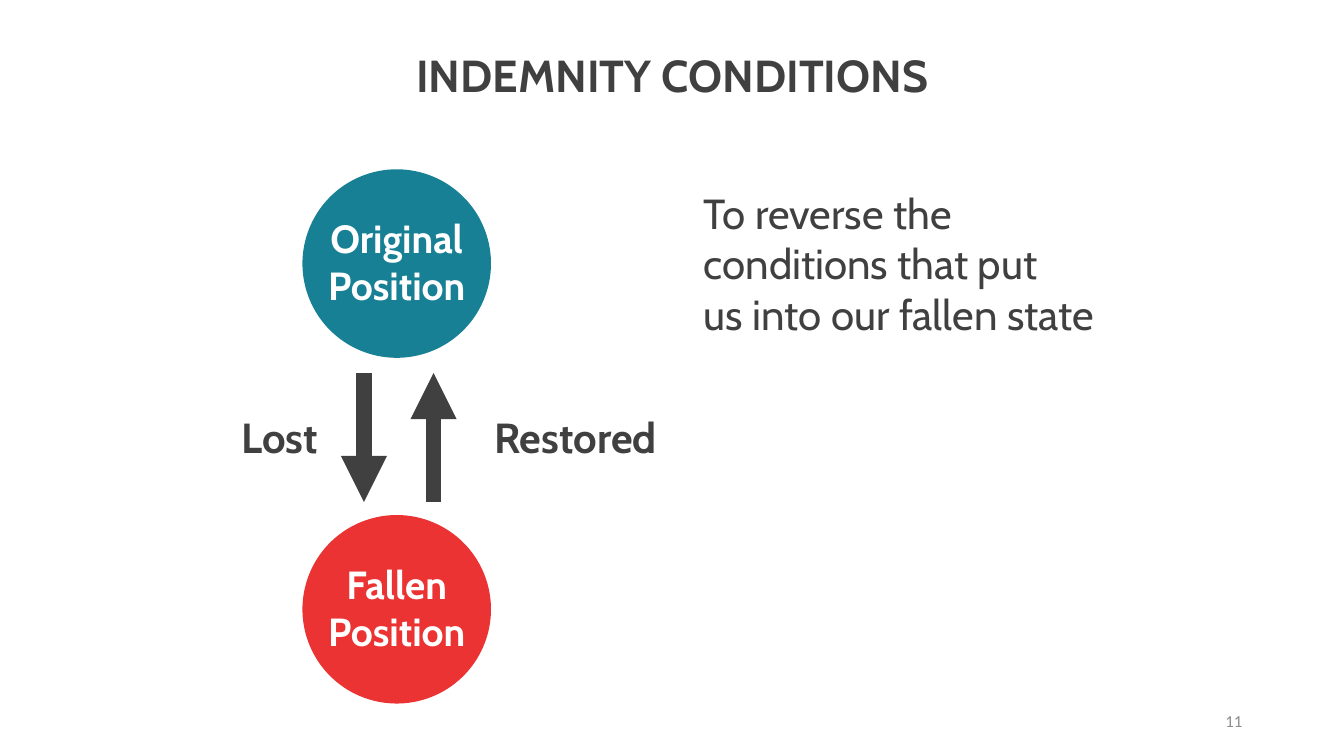
import pptx
import pptx.dml.color
import pptx.enum.shapes
import pptx.enum.text
import pptx.oxml
import pptx.oxml.ns
import pptx.util
from pptx.util import Inches

DARK = "404040"
WHITE = "FFFFFF"
ALIGN = pptx.enum.text.PP_ALIGN
ANCHOR = pptx.enum.text.MSO_ANCHOR
NAMESPACE = pptx.oxml.ns.nsdecls("a")


def colour(hex_value):
    """Return the colour for a hex string."""
    return pptx.dml.color.RGBColor.from_string(hex_value)


def place(holder, left, top, width, height):
    """Move and size a placeholder, in inches."""
    holder.left, holder.top = Inches(left), Inches(top)
    holder.width, holder.height = Inches(width), Inches(height)


def write(holder, text, size=30, font="Cabin", ink=DARK, bold=False, align=ALIGN.CENTER,
          anchor=ANCHOR.TOP, insets=(0.1, 0.05, 0.1, 0.05), wrap=True, bullet=True):
    """Fill a shape with formatted text, one paragraph per line."""
    frame = holder.text_frame
    frame.text = text
    frame.auto_size = pptx.enum.text.MSO_AUTO_SIZE.NONE
    frame.word_wrap = wrap
    frame.vertical_anchor = anchor
    (frame.margin_left, frame.margin_top,
     frame.margin_right, frame.margin_bottom) = map(Inches, insets)
    for paragraph in frame.paragraphs:
        if not bullet:
            properties = paragraph._p.get_or_add_pPr()
            properties.set("marL", "0")
            properties.set("indent", "0")
            properties.append(pptx.oxml.parse_xml(f"<a:buNone {NAMESPACE}/>"))
        paragraph.alignment = align
        paragraph.space_before = pptx.util.Pt(0)
        for run in paragraph.runs:
            run.font.name = font
            run.font.size = pptx.util.Pt(size)
            run.font.bold = bold
            run.font.color.rgb = colour(ink)


def add_position(slide, text, fill, left, top, diameter):
    """Draw a labelled circle for one position."""
    position = slide.shapes.add_shape(
        pptx.enum.shapes.MSO_SHAPE.OVAL, *map(Inches, (left, top, diameter, diameter)))
    position.shadow.inherit = False
    position.fill.solid()
    position.fill.fore_color.rgb = colour(fill)
    position.line.fill.background()
    write(position, text, size=28, ink=WHITE, bold=True, anchor=ANCHOR.MIDDLE,
          insets=(0, 0, 0, 0.04), wrap=False)


def add_arrow(slide, x, start, end):
    """Draw a thick vertical arrow from start to end."""
    arrow = slide.shapes.add_connector(
        pptx.enum.shapes.MSO_CONNECTOR.STRAIGHT, *map(Inches, (x, start, x, end)))
    arrow.line.color.rgb = colour(DARK)
    arrow.line.width = pptx.util.Pt(11)
    arrow.line._get_or_add_ln().append(
        pptx.oxml.parse_xml(f'<a:tailEnd {NAMESPACE} type="triangle"/>'))
    arrow._element.spPr.append(pptx.oxml.parse_xml(f"<a:effectLst {NAMESPACE}/>"))


def add_label(slide, text, left, top, width, height):
    """Add a bold label beside an arrow."""
    label = slide.shapes.add_textbox(*map(Inches, (left, top, width, height)))
    write(label, text, bold=True, insets=(0.04, 0.03, 0.04, 0.05))


def add_cycle(slide, left, top, width, height):
    """Draw the two positions with the arrows and labels between them."""
    diameter = 1.87
    circle_left = left + 0.81
    arrow_top, arrow_bottom = top + 2.02, top + 3.3
    label_top = top + 2.37
    add_position(slide, "Original\nPosition", "178095", circle_left, top, diameter)
    add_position(slide, "Fallen\nPosition", "EA3332", circle_left,
                 top + height - diameter, diameter)
    add_arrow(slide, left + 1.42, arrow_top, arrow_bottom)
    add_arrow(slide, left + 2.11, arrow_bottom, arrow_top)
    add_label(slide, "Lost", left, label_top, 1.17, 0.58)
    add_label(slide, "Restored", left + width - 2.34, label_top, 2.34, 0.58)


def add_page_number(slide, left, top, width, height):
    """Add the slide number as a field."""
    page_number = slide.shapes.add_textbox(*map(Inches, (left, top, width, height)))
    write(page_number, "11", size=12, font="Calibri", ink="8C8C8C",
          align=ALIGN.RIGHT, anchor=ANCHOR.MIDDLE)
    run = page_number.text_frame.paragraphs[0].runs[0]._r
    field = pptx.oxml.parse_xml(
        f'<a:fld {NAMESPACE} type="slidenum" '
        'id="{B6F15528-21DE-4FAA-801E-634DDDAF4B2B}"/>')
    run.addprevious(field)
    field.extend(list(run))
    run.getparent().remove(run)


def build_slide(deck):
    """Build the indemnity conditions slide."""
    slide = deck.slides.add_slide(deck.slide_layouts[1])
    heading, explanation = slide.placeholders
    place(heading, 1.67, 0.14, 10, 1.19)
    write(heading, "INDEMNITY CONDITIONS", size=32, bold=True, anchor=ANCHOR.MIDDLE)
    add_cycle(slide, 2.19, 1.68, 4.69, 5.3)
    place(explanation, 6.88, 1.81, 4.49, 1.62)
    write(explanation, "To reverse the conditions that put \vus into our fallen state",
          align=ALIGN.LEFT, bullet=False)
    add_page_number(slide, 9.42, 6.95, 3, 0.4)


def main():
    """Create and save the deck."""
    deck = pptx.Presentation()
    deck.slide_width, deck.slide_height = Inches(13.33), Inches(7.5)
    deck.element.set("firstSlideNum", "11")
    build_slide(deck)
    deck.save("out.pptx")


if __name__ == "__main__":
    main()
